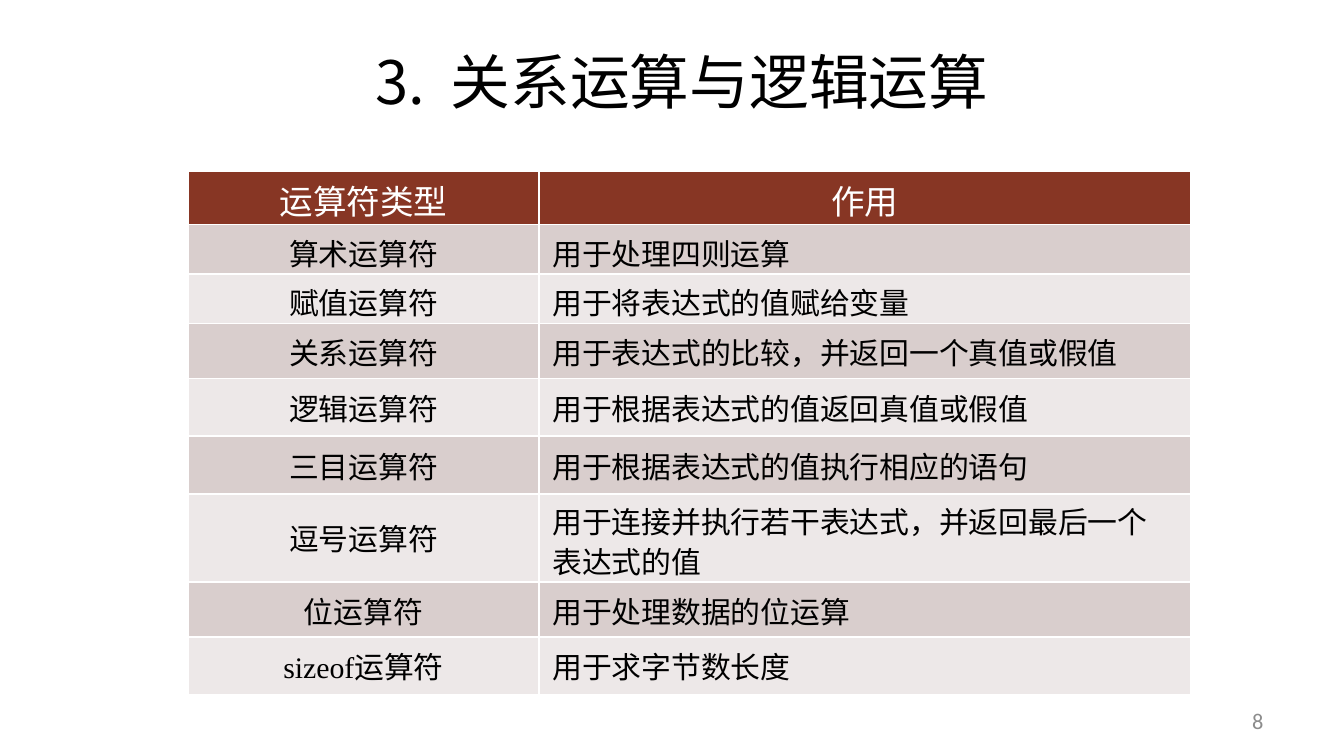
from dataclasses import dataclass

from lxml import etree
from pptx import Presentation
from pptx.dml.color import RGBColor
from pptx.enum.text import MSO_ANCHOR, PP_ALIGN
from pptx.oxml.ns import qn
from pptx.util import Pt

LEFT, MID, RIGHT = PP_ALIGN.LEFT, PP_ALIGN.CENTER, PP_ALIGN.RIGHT
CENTER = MSO_ANCHOR.MIDDLE


@dataclass(frozen=True)
class Theme:
    ink: str = "000000"
    white: str = "FFFFFF"
    head: str = "873624"
    bands: tuple = ("D9CECD", "EDE8E8")
    grey: str = "8C8C8C"
    title: int = 32
    label: int = 18
    body: int = 16
    small: int = 12
    sans: str = "Noto Sans CJK SC"
    serif: str = "Times New Roman"
    foot: str = "Calibri"


THEME = Theme()
ROWS = [
    ("运算符类型", "作用"),
    ("算术运算符", "用于处理四则运算"),
    ("赋值运算符", "用于将表达式的值赋给变量"),
    ("关系运算符", "用于表达式的比较，并返回一个真值或假值"),
    ("逻辑运算符", "用于根据表达式的值返回真值或假值"),
    ("三目运算符", "用于根据表达式的值执行相应的语句"),
    ("逗号运算符", "用于连接并执行若干表达式，并返回最后一个表达式的值"),
    ("位运算符", "用于处理数据的位运算"),
    ("sizeof运算符", "用于求字节数长度"),
]
HEIGHTS = [28.5, 26.5, 26.5, 29.5, 31, 31, 47, 29.5, 31]
WIDTHS = [187.9, 349.2]
PAD = 3.6
LEAD = 1.45
TIGHT = 0.94


def style(frame, size, color, face, align):
    frame.vertical_anchor = CENTER
    for para in frame.paragraphs:
        para.alignment = align
        for run in para.runs:
            font = run.font
            font.size, font.name, font.bold = Pt(size), face, False
            font.color.rgb = RGBColor.from_string(color)


def place(shape, left, top, width, height):
    shape.left, shape.top = Pt(left), Pt(top)
    shape.width, shape.height = Pt(width), Pt(height)


def number(para, start, indent):
    props = para._p.get_or_add_pPr()
    props.set("marL", str(Pt(indent)))
    props.set("indent", str(-Pt(indent)))
    mark = etree.SubElement(props, qn("a:buAutoNum"))
    mark.set("type", "arabicPeriod")
    mark.set("startAt", str(start))


def add_title(slide, text):
    title = slide.shapes.title
    place(title, 79.9, 20.2, 571, 46)
    frame = title.text_frame
    frame.text = text
    frame.word_wrap = True
    frame.margin_top = frame.margin_bottom = 0
    number(frame.paragraphs[0], 3, 40.3)
    style(frame, THEME.title, THEME.ink, THEME.sans, MID)
    for run in frame.paragraphs[0].runs:
        face = etree.SubElement(run.font._element, qn("a:ea"))
        face.set("typeface", THEME.sans)


def add_edge(cell, side):
    props = cell._tc.get_or_add_tcPr()
    line = etree.SubElement(props, qn(f"a:{side}"), w=str(Pt(1)))
    fill = etree.SubElement(line, qn("a:solidFill"))
    etree.SubElement(fill, qn("a:srgbClr"), val=THEME.white)


def fit(cell, text, size, row, col):
    lines = 2 if len(text) * size > WIDTHS[col] - 4 * PAD else 1
    need = lines * size * LEAD
    if lines > 1:
        cell.text_frame.paragraphs[0].line_spacing = TIGHT
        need *= TIGHT
    spare = max(0, HEIGHTS[row] - need)
    top = min(PAD, spare)
    cell.margin_top = Pt(top)
    cell.margin_bottom = Pt(min(PAD, spare - top))


def fill_cell(cell, text, row, col):
    head = row == 0
    cell.text = text
    cell.vertical_anchor = CENTER
    for side in ("lnL", "lnR", "lnT", "lnB"):
        add_edge(cell, side)
    cell.fill.solid()
    shade = THEME.head if head else THEME.bands[(row - 1) % 2]
    cell.fill.fore_color.rgb = RGBColor.from_string(shade)
    size = THEME.label if head else THEME.body
    color = THEME.white if head else THEME.ink
    align = MID if head or col == 0 else LEFT
    style(cell.text_frame, size, color, THEME.serif, align)
    fit(cell, text, size, row, col)


def add_grid(slide):
    frame = slide.shapes.add_table(
        len(ROWS), len(WIDTHS), Pt(100.8), Pt(91.8),
        Pt(sum(WIDTHS)), Pt(sum(HEIGHTS)))
    table = frame.table
    table.first_row = table.horz_banding = False
    for col, width in zip(table.columns, WIDTHS):
        col.width = Pt(width)
    for row, height in zip(table.rows, HEIGHTS):
        row.height = Pt(height)
    for row, texts in enumerate(ROWS):
        for col, text in enumerate(texts):
            fill_cell(table.cell(row, col), text, row, col)


def add_page(slide, text):
    box = slide.shapes.add_textbox(Pt(516.2), Pt(375.1), Pt(167.8), Pt(21.6))
    frame = box.text_frame
    frame.word_wrap = True
    frame.text = text
    style(frame, THEME.small, THEME.grey, THEME.foot, RIGHT)


def main():
    deck = Presentation()
    deck.slide_width, deck.slide_height = Pt(720), Pt(405)
    slide = deck.slides.add_slide(deck.slide_layouts[5])
    add_title(slide, "关系运算与逻辑运算")
    add_grid(slide)
    add_page(slide, "8")
    deck.save("out.pptx")


if __name__ == "__main__":
    main()
